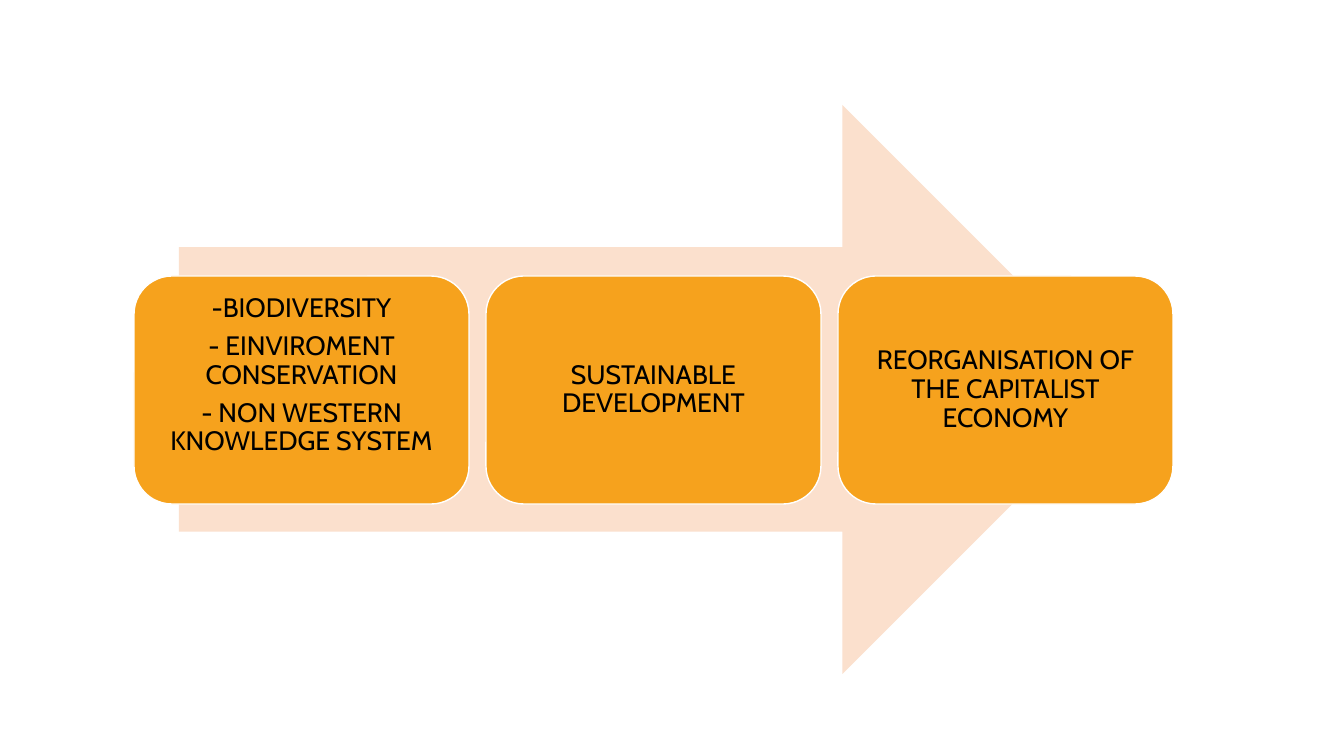
import pptx
import pptx.util
import pptx.dml.color
import pptx.enum.shapes
import pptx.enum.text

PX = 914400 / 100.8
COLORS = {"arrow": "FBE0CD", "card": "F6A21D", "edge": "FFFFFF", "text": "000000"}
SHAPES = pptx.enum.shapes.MSO_SHAPE


def px(length):
    return pptx.util.Emu(round(length * PX))


def color(name):
    return pptx.dml.color.RGBColor.from_string(COLORS[name])


class ProcessSlide:
    font_name = "Cabin"
    font_size = pptx.util.Pt(19)
    inset = 8

    def __init__(self, presentation):
        self.slide = presentation.slides.add_slide(presentation.slide_layouts[6])

    def block(self, preset, left, top, width, height, fill):
        block = self.slide.shapes.add_shape(
            preset, px(left), px(top), px(width), px(height))
        block.shadow.inherit = False
        block.fill.solid()
        block.fill.fore_color.rgb = color(fill)
        block.line.fill.background()
        return block

    def arrow(self, left, top, width, height):
        self.block(SHAPES.RIGHT_ARROW, left, top, width, height, "arrow")

    def card(self, left, top, width, height, lines, room_below=0):
        card = self.block(SHAPES.ROUNDED_RECTANGLE, left, top, width, height, "card")
        card.line.color.rgb = color("edge")
        card.line.width = pptx.util.Pt(1)

        frame = card.text_frame
        frame.word_wrap = True
        frame.vertical_anchor = pptx.enum.text.MSO_ANCHOR.MIDDLE
        frame.margin_left = frame.margin_right = frame.margin_top = px(self.inset)
        frame.margin_bottom = px(self.inset + room_below)
        for index, line in enumerate(lines):
            paragraph = frame.add_paragraph() if index else frame.paragraphs[0]
            paragraph.alignment = pptx.enum.text.PP_ALIGN.CENTER
            paragraph.line_spacing = 0.9
            paragraph.space_after = pptx.util.Pt(6.65)
            run = paragraph.add_run()
            run.text = line
            run.font.name = self.font_name
            run.font.size = self.font_size
            run.font.color.rgb = color("text")


def main():
    presentation = pptx.Presentation()
    presentation.slide_width = px(1344)
    presentation.slide_height = px(756)
    process = ProcessSlide(presentation)

    # Arrow behind the steps
    process.arrow(179, 105, 948, 569)

    # Three steps, left to right; the first sits one text line higher
    steps = [
        (["-BIODIVERSITY", "- EINVIROMENT CONSERVATION",
          "- NON WESTERN KNOWLEDGE SYSTEM"], 29),
        (["SUSTAINABLE DEVELOPMENT"], 0),
        (["REORGANISATION OF THE CAPITALIST ECONOMY"], 0),
    ]
    for column, (lines, room_below) in enumerate(steps):
        process.card(134 + 352 * column, 276, 335, 228, lines, room_below)

    presentation.save("out.pptx")


if __name__ == "__main__":
    main()
